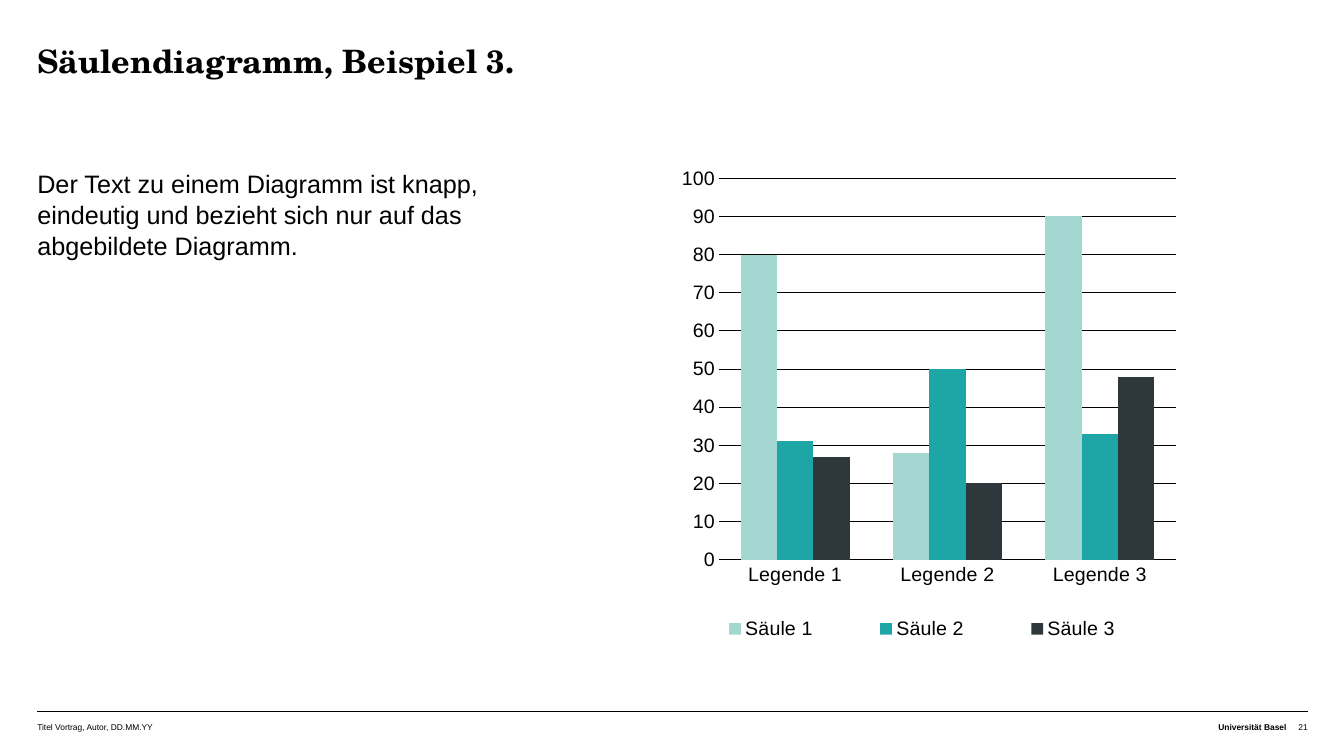
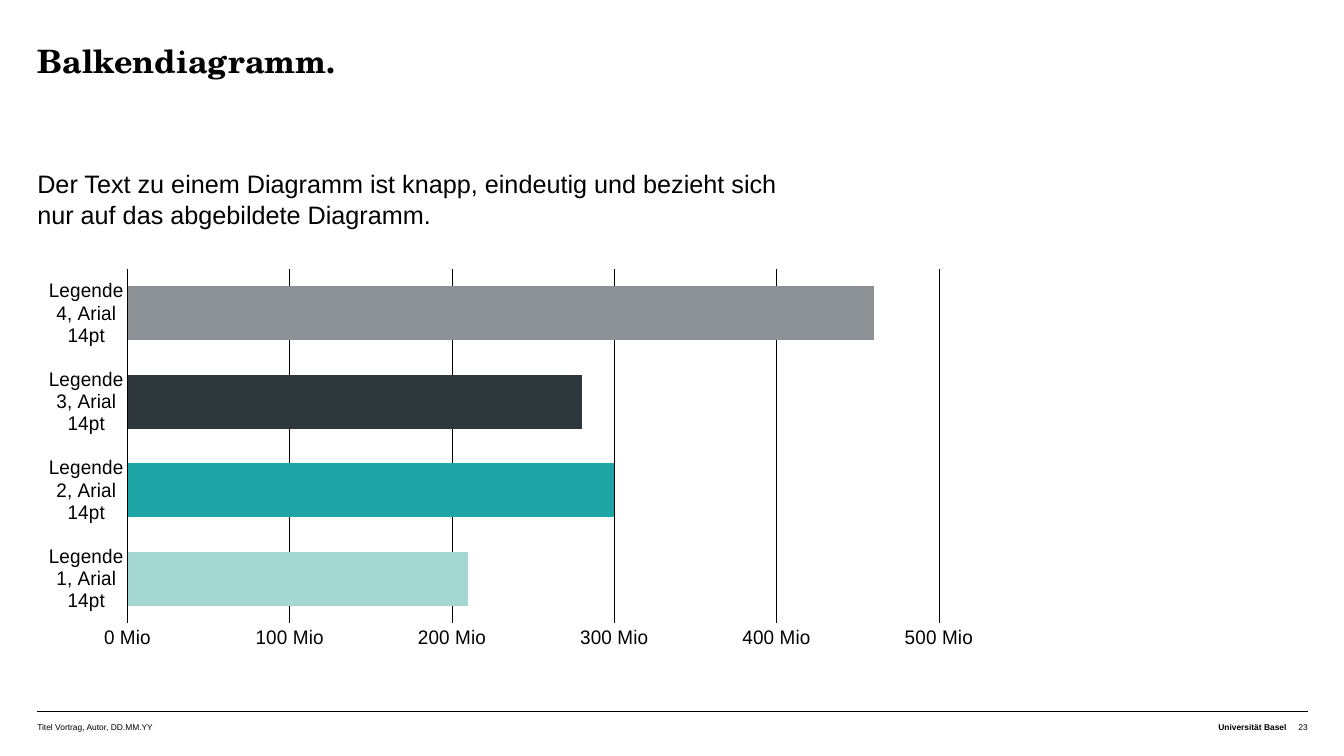
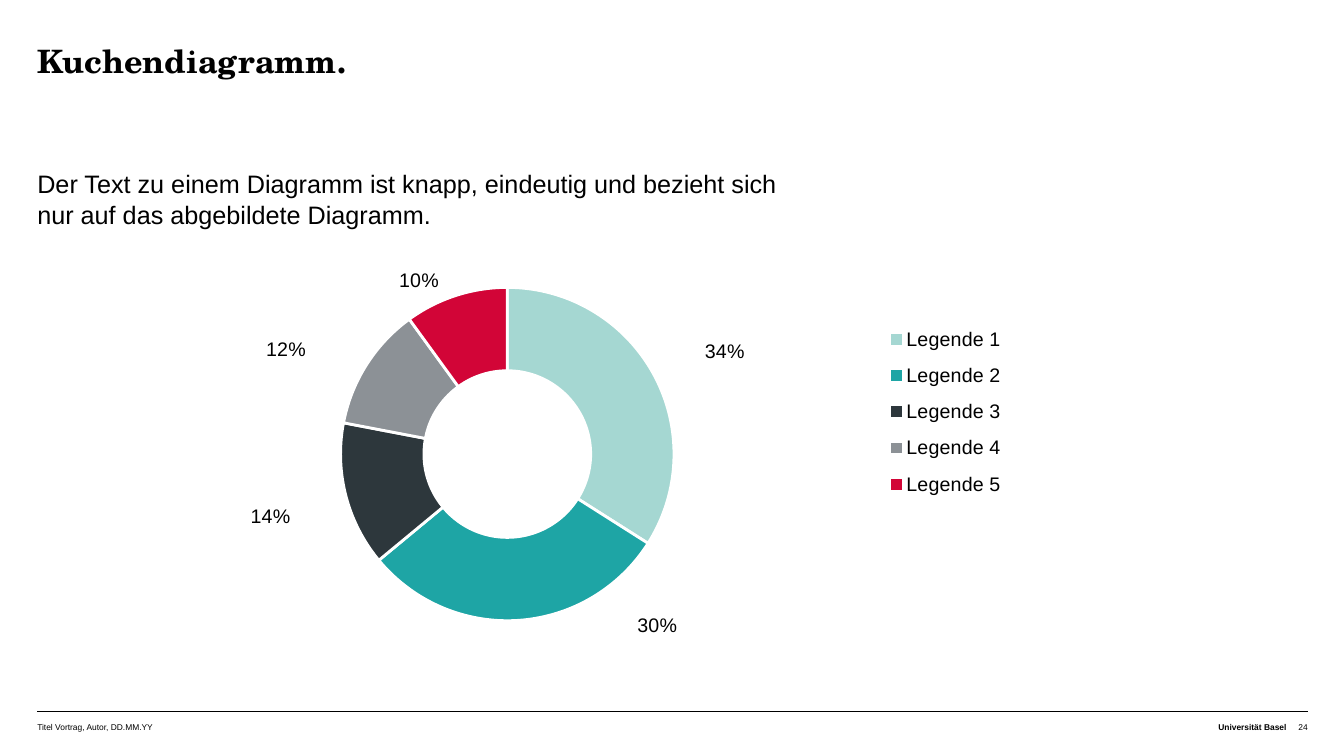
from lxml.etree import SubElement
from pptx import Presentation
from pptx.chart.data import CategoryChartData
from pptx.dml.color import RGBColor
from pptx.enum.chart import XL_CHART_TYPE, XL_LEGEND_POSITION, XL_TICK_MARK
from pptx.enum.shapes import MSO_CONNECTOR
from pptx.enum.text import MSO_ANCHOR, MSO_AUTO_SIZE, PP_ALIGN
from pptx.oxml.ns import qn
from pptx.util import Inches, Pt

BLACK = "000000"
WHITE = "FFFFFF"
PALETTE = ["A5D7D2", "1EA5A5", "2D373C", "8C9196", "D20537"]
TITLE_FONT = "TeX Gyre Schola"
TEXT_FONT = "Arial"
CELL = 0.21
MARGIN = 0.37
COLUMNS = 60


def color(value):
    return RGBColor.from_string(value)


def set_font(font, size, name=TEXT_FONT, bold=False):
    font.name = name
    font.size = Pt(size)
    font.bold = bold
    font.color.rgb = color(BLACK)


def set_line(line, value, width):
    line.color.rgb = color(value)
    line.width = Pt(width)


def set_layout(parent, index, **settings):
    for old in parent.findall(qn("c:layout")):
        parent.remove(old)
    layout = SubElement(parent, qn("c:layout"))
    manual = SubElement(layout, qn("c:manualLayout"))
    for tag, value in settings.items():
        SubElement(manual, qn(f"c:{tag}")).set("val", str(value))
    parent.insert(index, layout)


def set_frame(parent, index, frame, **target):
    x, y, w, h = frame
    set_layout(parent, index, **target, xMode="edge", yMode="edge", x=x, y=y, w=w, h=h)


class ChartDeck:
    def __init__(self):
        self.deck = Presentation()
        self.deck.slide_width = Inches(13.33)
        self.deck.slide_height = Inches(7.5)
        self.page = None

    def grid(self, column, row, columns, rows):
        return (Inches(MARGIN + column * CELL), Inches(row * CELL),
                Inches(columns * CELL), Inches(rows * CELL))

    def add_page(self, title, text, text_columns, text_rows, number):
        self.page = self.deck.slides.add_slide(self.deck.slide_layouts[1])
        heading, body = self.page.placeholders
        self.fill_placeholder(heading, (0, 2.1, COLUMNS, 3.95), title, 25, 23, TITLE_FONT, True)
        self.fill_placeholder(body, (0, 7.92, text_columns, text_rows), text, 22, 18)
        self.footer(number)

    def fill_placeholder(self, box, cells, text, spacing, size, name=TEXT_FONT, bold=False):
        box.left, box.top, box.width, box.height = self.grid(*cells)
        self.frame(box, 0)
        para = box.text_frame.paragraphs[0]
        para.text = text
        properties = para._p.get_or_add_pPr()
        properties.set("marL", "0")
        properties.set("indent", "0")
        SubElement(properties, qn("a:buNone"))
        para.alignment = PP_ALIGN.LEFT
        para.line_spacing = Pt(spacing)
        para.space_before = Pt(0)
        set_font(para.font, size, name, bold)

    def frame(self, box, top):
        frame = box.text_frame
        frame.word_wrap = True
        frame.auto_size = MSO_AUTO_SIZE.NONE
        frame.vertical_anchor = MSO_ANCHOR.TOP
        frame.margin_left = frame.margin_right = frame.margin_bottom = 0
        frame.margin_top = Inches(top)

    def footer(self, number):
        left, top, width, _ = self.grid(0, 33.62, COLUMNS, 0)
        rule = self.page.shapes.add_connector(
            MSO_CONNECTOR.STRAIGHT, left, top, left + width, top)
        set_line(rule.line, BLACK, 0.25)
        SubElement(rule.element.spPr, qn("a:effectLst"))
        self.note(0, 15, "Titel Vortrag, Autor, DD.MM.YY", PP_ALIGN.LEFT)
        self.note(45.75, 13.25, "Universität Basel", PP_ALIGN.RIGHT, True)
        self.note(59, 1, str(number), PP_ALIGN.RIGHT)

    def note(self, column, columns, text, alignment, bold=False):
        box = self.page.shapes.add_textbox(*self.grid(column, 34, columns, 0.95))
        self.frame(box, 0.02)
        para = box.text_frame.paragraphs[0]
        para.text = text
        para.alignment = alignment
        set_font(para.font, 6, bold=bold)

    def add_chart(self, kind, cells, categories, series, plot_frame, number_format="General"):
        data = CategoryChartData(number_format=number_format)
        data.categories = categories
        for name, values in series.items():
            data.add_series(name, values)
        chart = self.page.shapes.add_chart(kind, *self.grid(*cells), data).chart
        chart.has_title = False
        chart.has_legend = False
        set_font(chart.font, 14)
        set_frame(chart.element.xpath(".//c:plotArea")[0], 0, plot_frame, layoutTarget="inner")
        return chart

    def style_bars(self, chart, gap, maximum, step, number_format="General"):
        plot = chart.plots[0]
        plot.vary_by_categories = False
        plot.gap_width = gap
        plot.overlap = 0
        for series, fill in zip(plot.series, PALETTE):
            series.invert_if_negative = False
            self.paint(series, fill)
        for axis in (chart.category_axis, chart.value_axis):
            axis.major_tick_mark = axis.minor_tick_mark = XL_TICK_MARK.NONE
            set_font(axis.tick_labels.font, 14)
        set_line(chart.category_axis.format.line, BLACK, 0.5)
        values = chart.value_axis
        values.format.line.fill.background()
        values.minimum_scale = 0
        values.maximum_scale = maximum
        values.major_unit = step
        values.has_major_gridlines = True
        set_line(values.major_gridlines.format.line, BLACK, 0.5)
        values.tick_labels.number_format = number_format
        values.tick_labels.number_format_is_linked = False

    def paint(self, item, fill):
        item.format.fill.solid()
        item.format.fill.fore_color.rgb = color(fill)

    def paint_points(self, chart, count):
        points = [chart.plots[0].series[0].points[index] for index in range(count)]
        for point, fill in zip(points, PALETTE):
            self.paint(point, fill)
        return points

    def add_legend(self, chart, position, frame):
        chart.has_legend = True
        chart.legend.position = position
        chart.legend.include_in_layout = False
        set_font(chart.legend.font, 14)
        set_frame(chart.element.xpath(".//c:legend")[0], 1, frame)

    def style_ring(self, chart, hole, label_shifts):
        chart.element.xpath(".//c:holeSize")[0].set("val", str(hole))
        labels = chart.plots[0].series[0].data_labels
        labels.show_value = True
        labels.show_percentage = False
        labels.number_format = "0%"
        labels.number_format_is_linked = False
        set_font(labels.font, 14)
        for point in self.paint_points(chart, len(label_shifts)):
            set_line(point.format.line, WHITE, 2)
            set_font(point.data_label.font, 14)
        for label, (right, down) in zip(chart.element.xpath(".//c:dLbl"), label_shifts):
            set_layout(label, 1, x=right / 100, y=down / 100)
        for group in chart.element.xpath(".//c:dLbls"):
            leader = group.find(qn("c:showLeaderLines"))
            if leader is None:
                leader = SubElement(group, qn("c:showLeaderLines"))
            leader.set("val", "0")


def legends(count, suffix=""):
    return [f"Legende {index}{suffix}" for index in range(1, count + 1)]


def main():
    slides = ChartDeck()
    sentence = ("Der Text zu einem Diagramm ist knapp, eindeutig und bezieht sich{}"
                "nur auf das abgebildete Diagramm.")

    slides.add_page("Säulendiagramm, Beispiel 3.", sentence.format(" "), 24.75, 22.67, 21)
    columns = slides.add_chart(
        XL_CHART_TYPE.COLUMN_CLUSTERED, (29.8, 7.9, 24, 22.6), legends(3),
        {"Säule 1": (80, 28, 90), "Säule 2": (31, 50, 33), "Säule 3": (27, 20, 48)},
        (0.1, 0.02, 0.9, 0.8))
    slides.style_bars(columns, 120, 100, 10)
    slides.add_legend(columns, XL_LEGEND_POSITION.BOTTOM, (0, 0.93, 1, 0.07))

    slides.add_page("Balkendiagramm.", sentence.format("\v"), 43.5, 3.1, 23)
    bars = slides.add_chart(
        XL_CHART_TYPE.BAR_CLUSTERED, (0, 12.32, 44.2, 19.45), legends(4, ", Arial 14pt"),
        {"Series 1": (210, 300, 280, 460)}, (0.1, 0.02, 0.9, 0.86))
    slides.style_bars(bars, 63, 500, 100, '#0\\ "Mio"')
    slides.paint_points(bars, 4)

    slides.add_page("Kuchendiagramm.", sentence.format("\v"), 51.57, 3.1, 24)
    ring = slides.add_chart(
        XL_CHART_TYPE.DOUGHNUT, (0, 11.48, COLUMNS, 21), legends(5),
        {"Series 1": (0.34, 0.3, 0.14, 0.12, 0.1)}, (0.14, 0.1, 0.46, 0.75), "0%")
    slides.style_ring(ring, 60, [(8.5, -9.5), (11.2, 10.5), (-9.1, 7.2),
                                 (-9.1, -8.4), (-3.9, -12.3)])
    slides.add_legend(ring, XL_LEGEND_POSITION.RIGHT, (0.65, 0.16, 0.13, 0.44))

    slides.deck.save("out.pptx")


if __name__ == "__main__":
    main()
